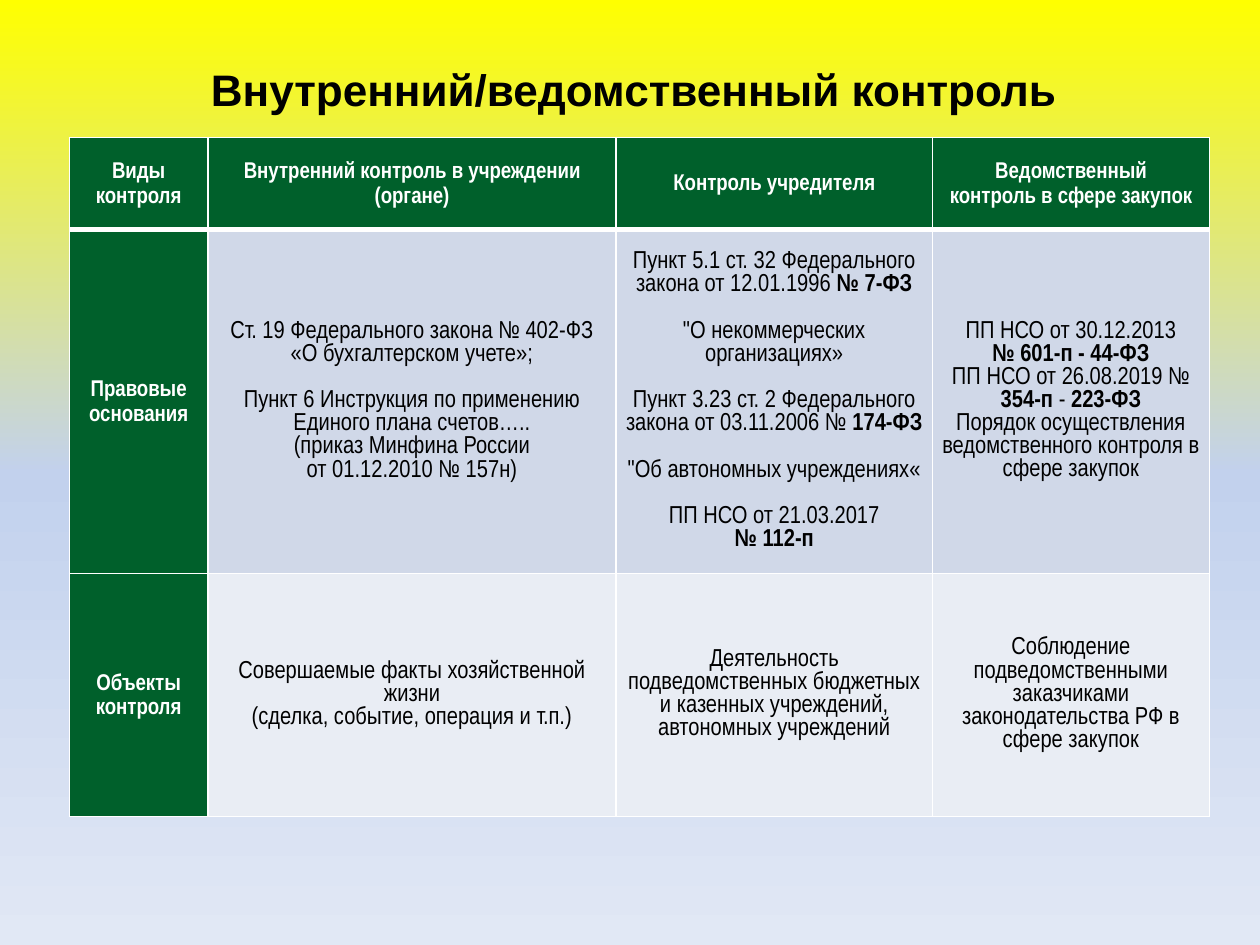
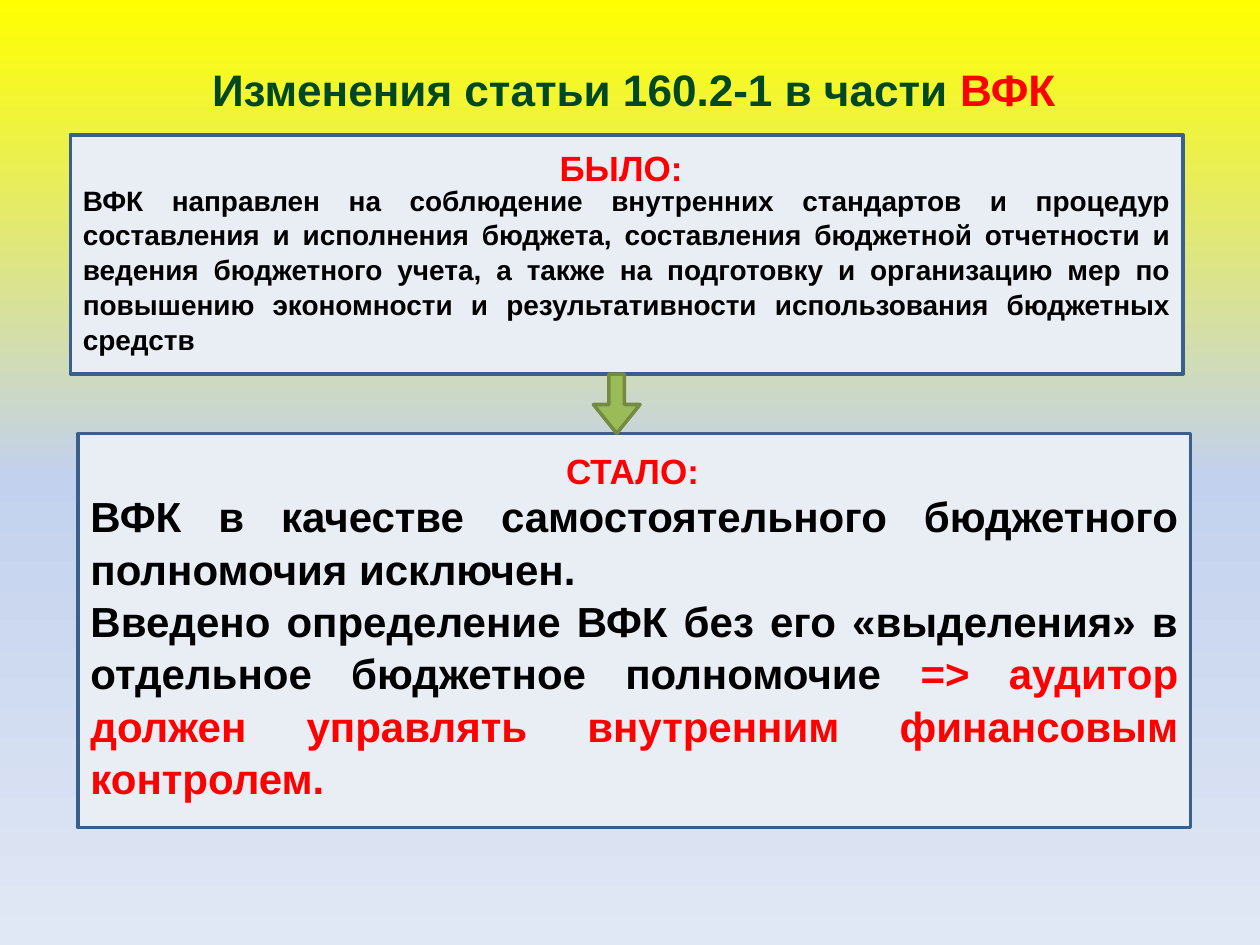
import pptx
import pptx.util
import pptx.dml.color
import pptx.enum.shapes
import pptx.enum.text
import pptx.oxml
import pptx.oxml.ns
import copy

Inches, Pt = pptx.util.Inches, pptx.util.Pt
SHAPE = pptx.enum.shapes.MSO_SHAPE
ALIGN = pptx.enum.text.PP_ALIGN
MIDDLE = pptx.enum.text.MSO_ANCHOR.MIDDLE

# Content: a bar switches the accent on and off, "\n" starts a paragraph,
# an empty line stands for a gap before the paragraph
TITLES = ["Внутренний/ведомственный контроль",
          "Изменения статьи 160.2-1 в части |ВФК|"]
ROWS = [
    ["Виды контроля",
     "Внутренний контроль в учреждении (органе)",
     "Контроль учредителя",
     "Ведомственный\nконтроль в сфере закупок"],
    ["Правовые основания",
     "Ст. 19 Федерального закона № 402-ФЗ\n«О бухгалтерском учете»;\n\n"
     "Пункт 6 Инструкция по применению Единого плана счетов…..\n"
     "(приказ Минфина России\nот 01.12.2010 № 157н)",
     "Пункт 5.1 ст. 32 Федерального закона от 12.01.1996 |№ 7-ФЗ|\n\n"
     "\"О некоммерческих организациях»\n\n"
     "Пункт 3.23 ст. 2 Федерального закона от 03.11.2006 № |174-ФЗ|\n\n"
     "\"Об автономных учреждениях«\n\n"
     "ПП НСО от 21.03.2017\n|№ 112-п|",
     "ПП НСО от 30.12.2013\n|№ 601-п - 44-ФЗ|\n"
     "ПП НСО от 26.08.2019 № |354-п| - |223-ФЗ|\n"
     "Порядок осуществления ведомственного контроля в сфере закупок"],
    ["Объекты контроля",
     "Совершаемые факты хозяйственной жизни\n(сделка, событие, операция и т.п.)",
     "Деятельность подведомственных бюджетных и казенных учреждений, "
     "автономных учреждений",
     "Соблюдение подведомственными заказчиками законодательства РФ "
     "в сфере закупок"],
]
COLS, HEIGHTS = [1.1, 3.24, 2.51, 2.2], [0.73, 2.73, 1.93]
BOXES = [
    dict(at=(0.56, 1.07, 8.83, 1.9), head="БЫЛО:", spot=(2.35, 1.11, 5.16, 0.44),
         size=16, top=0.28,
         text="ВФК направлен на соблюдение внутренних стандартов и процедур "
              "составления и исполнения бюджета, составления бюджетной отчетности "
              "и ведения бюджетного учета, а также на подготовку и организацию мер "
              "по повышению экономности и результативности использования "
              "бюджетных средств"),
    dict(at=(0.62, 3.44, 8.83, 3.13), head="СТАЛО:", spot=(2.73, 3.52, 4.58, 0.44),
         size=24, top=0.29,
         text="ВФК в качестве самостоятельного бюджетного полномочия исключен.\n"
              "Введено определение ВФК без его «выделения» в отдельное бюджетное "
              "полномочие |=> аудитор должен управлять внутренним финансовым "
              "контролем.|"),
]
ARROW = (4.71, 2.97, 0.37, 0.47)

# Shared look
BLACK, WHITE, RED = "000000", "FFFFFF", "FF0000"
GREEN, DEEP, BLUE, PALE = "00602B", "004821", "D0D8E8", "E9EDF4"
SKY = [(0, "FFFF00"), (0.5, "C2D1ED"), (1, "E1E8F5")]
TITLE = dict(name="Arial", size=Pt(25.2), bold=True)
HEAD = dict(name="Arial", size=Pt(20), bold=True)
LABEL = dict(name="Arial Narrow", size=Pt(13), bold=True)
BODY = dict(name="Arial Narrow", size=Pt(14), bold=False)
GAP = Pt(13.3)


def rgb(code):
    return pptx.dml.color.RGBColor.from_string(code)


def place(at):
    return [Inches(n) for n in at]


def setup(obj, **form):
    for key, val in form.items():
        setattr(obj, key, val)


def write(frame, text, form, color=BLACK, accent=RED, align=ALIGN.CENTER,
          pitch=1.0):
    """Fill a frame; accented runs turn bold and take the accent colour."""
    first, gap = True, False
    for line in text.split("\n"):
        if not line:
            gap = True
            continue
        para = frame.paragraphs[0] if first else frame.add_paragraph()
        setup(para, alignment=align, line_spacing=pitch,
              space_before=GAP if gap else Pt(0))
        first = gap = False
        for i, part in enumerate(line.split("|")):
            if part:
                run = para.add_run()
                run.text = part
                setup(run.font, **form)
                run.font.color.rgb = rgb(accent if i % 2 else color)
                if i % 2:
                    run.font.bold = True


def paint(shape, fill, line):
    shape.shadow.inherit = False
    shape.fill.solid()
    shape.fill.fore_color.rgb = rgb(fill)
    shape.line.color.rgb = rgb(line)
    shape.line.width = Pt(2)


def backdrop(master):
    fill = master.background.fill
    fill.gradient()
    fill.gradient_angle = 270
    stops = master.element.find(".//" + pptx.oxml.ns.qn("a:gsLst"))
    stops.append(copy.deepcopy(stops[-1]))
    for stop, (pos, code) in zip(fill.gradient_stops, SKY):
        stop.position = pos
        stop.color.rgb = rgb(code)


def start(deck, text, color):
    slide = deck.slides.add_slide(deck.slide_layouts.get_by_name("Title Only"))
    title = slide.shapes.title
    setup(title, **dict(zip(("left", "top", "width", "height"),
                            place((0.78, 0.47, 8.5, 0.47)))))
    setup(title.text_frame, vertical_anchor=MIDDLE, word_wrap=True,
          auto_size=pptx.enum.text.MSO_AUTO_SIZE.NONE)
    write(title.text_frame, text, TITLE, color)
    return slide


def border(cell, row):
    """White rules, thicker under the header row."""
    props = cell._tc.get_or_add_tcPr()
    thick = {"T": row == 1, "B": row == 0}
    for side in "LRTB":
        width = Pt(3 if thick.get(side) else 1)
        props.append(pptx.oxml.parse_xml(
            f'<a:ln{side} {pptx.oxml.ns.nsdecls("a")} w="{width}"><a:solidFill>'
            f'<a:srgbClr val="{WHITE}"/></a:solidFill></a:ln{side}>'))


def grid(slide):
    table = slide.shapes.add_table(
        len(ROWS), len(COLS),
        *place((0.55, 1.09, sum(COLS), sum(HEIGHTS)))).table
    for col, wide in zip(table.columns, COLS):
        col.width = Inches(wide)
    for r, (row, high) in enumerate(zip(ROWS, HEIGHTS)):
        table.rows[r].height = Inches(high)
        for c, text in enumerate(row):
            cell, label = table.cell(r, c), r == 0 or c == 0
            setup(cell, vertical_anchor=MIDDLE, margin_top=0, margin_bottom=0,
                  margin_left=Inches(0.04), margin_right=Inches(0.04))
            border(cell, r)
            cell.fill.solid()
            cell.fill.fore_color.rgb = rgb(GREEN if label else (BLUE, PALE)[r - 1])
            if label:
                write(cell.text_frame, text, LABEL, WHITE, pitch=1.15)
            else:
                write(cell.text_frame, text, BODY, accent=BLACK)


def panel(slide, box):
    rect = slide.shapes.add_shape(SHAPE.RECTANGLE, *place(box["at"]))
    paint(rect, PALE, "3A5F8C")
    setup(rect.text_frame, vertical_anchor=MIDDLE, word_wrap=True,
          margin_top=Inches(box["top"]))
    form = dict(HEAD, size=Pt(box["size"]))
    write(rect.text_frame, box["text"], form, align=ALIGN.JUSTIFY, pitch=1.04)
    head = slide.shapes.add_textbox(*place(box["spot"]))
    head.text_frame.word_wrap = True
    write(head.text_frame, box["head"], HEAD, RED)


def main():
    deck = pptx.Presentation()
    setup(deck, slide_width=Inches(10), slide_height=Inches(7.5))
    backdrop(deck.slide_master)

    # Kinds of control
    grid(start(deck, TITLES[0], BLACK))

    # Before and after
    slide = start(deck, TITLES[1], DEEP)
    for box in BOXES:
        panel(slide, box)
    arrow = slide.shapes.add_shape(SHAPE.DOWN_ARROW, *place(ARROW))
    paint(arrow, "9BBB59", "738A42")
    arrow.adjustments[0], arrow.adjustments[1] = 0.33, 0.62

    deck.save("out.pptx")


if __name__ == "__main__":
    main()
